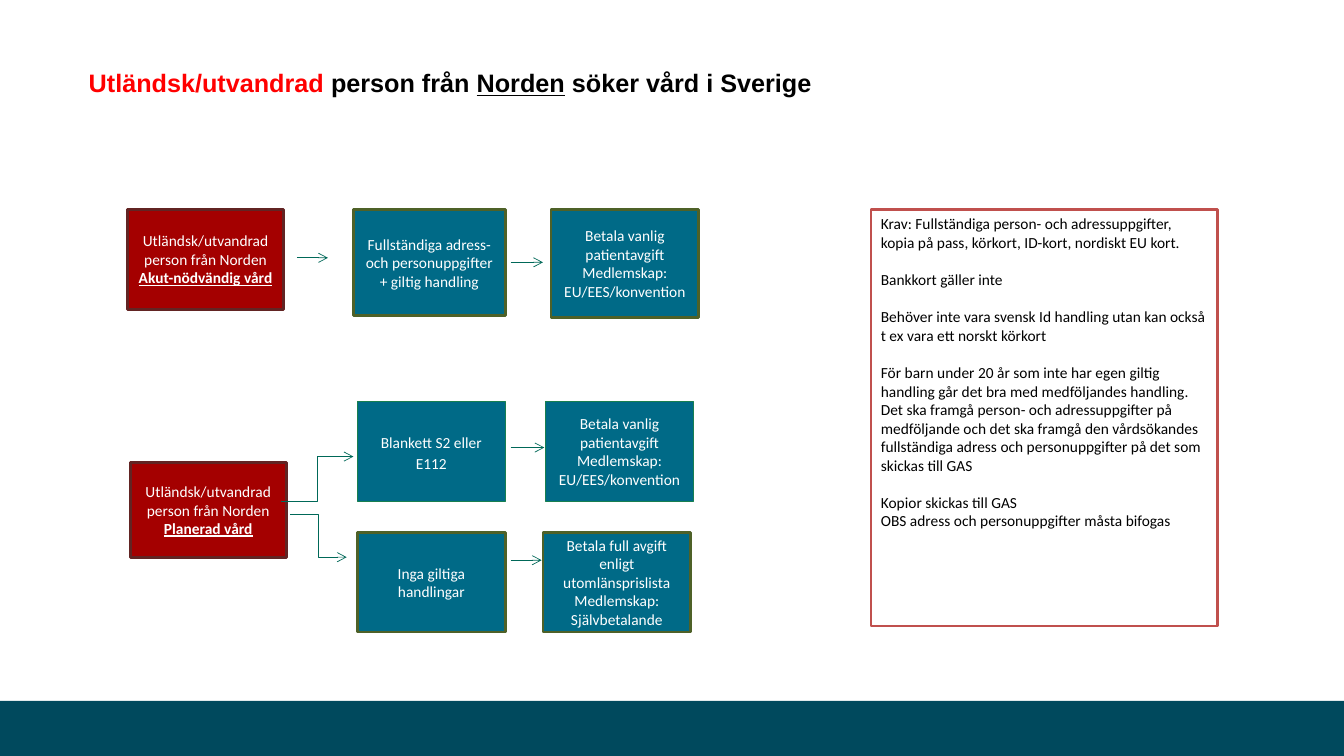
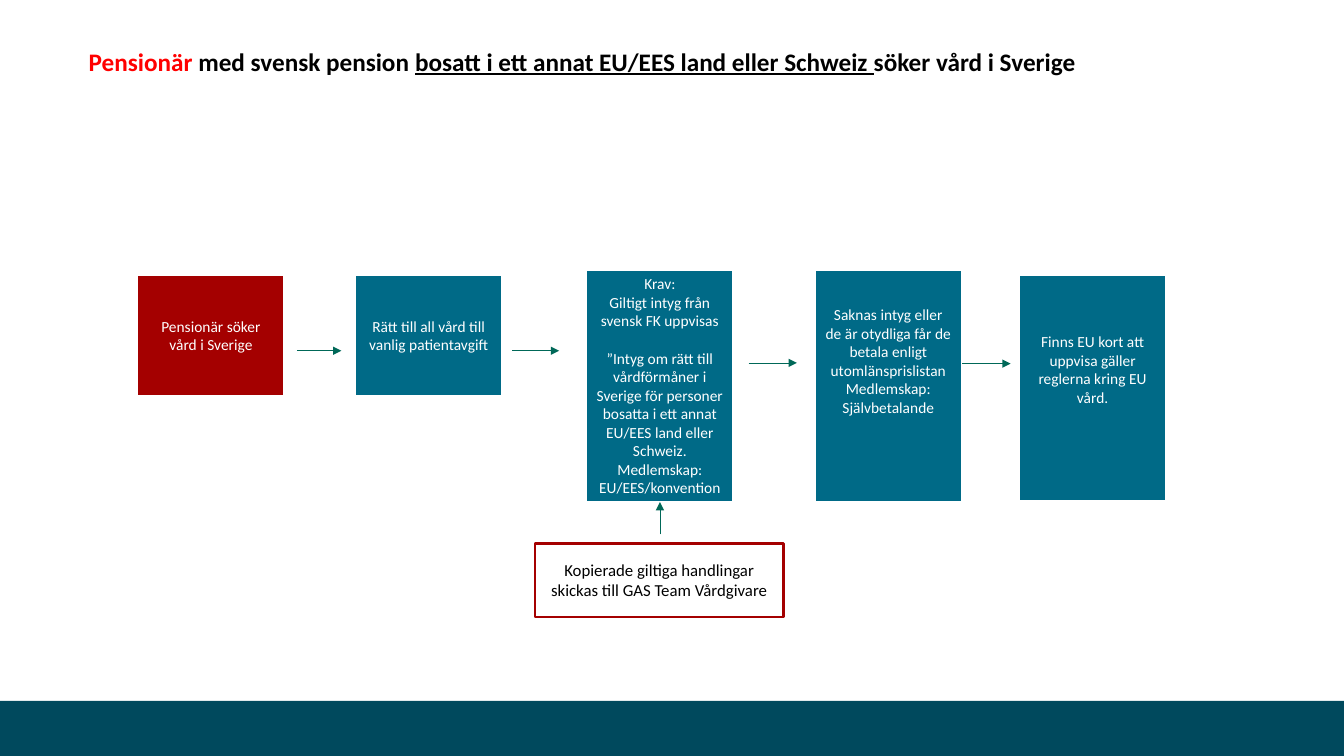
from lxml import etree
from pptx import Presentation
from pptx import util as u
from pptx.dml.color import RGBColor
from pptx.enum import shapes, text
from pptx.oxml import ns

# Shared look
WIDTH, HEIGHT = u.Inches(13.33), u.Inches(7.5)
RED, TEAL, NAVY, GREEN = "A40000", "006A87", "00495D", "006858"
MAROON, OLIVE, LEAF, CORAL = "622423", "4E6128", "187F50", "C0504D"
WHITE, BLACK, TITLE_RED = "FFFFFF", "000000", "FF0000"
BODY_FONT = "Calibri"
BLANK_LINE = 13.4  # points, one line of 11 pt text

# Texts used more than once
PAY_USUAL = "Betala vanlig patientavgift\nMedlemskap: EU/EES/konvention"
PERSON = "Utländsk/utvandrad person från Norden\n"


def color(hex_string):
    return RGBColor.from_string(hex_string)


def across(share):
    """Length as a percentage of the slide's width."""
    return int(WIDTH * share / 100)


def down(share):
    """Length as a percentage of the slide's height."""
    return int(HEIGHT * share / 100)


def place(left, top, width, height):
    return across(left), down(top), across(width), down(height)


def style_font(font, size, hex_string, name=BODY_FONT, bold=False, underline=False):
    font.size = u.Pt(size)
    font.name = name
    font.color.rgb = color(hex_string)
    font.bold = bold
    font.underline = underline


def add_rectangle(slide, area, fill, line=None, line_width=2):
    shape = slide.shapes.add_shape(shapes.MSO_SHAPE.RECTANGLE, *place(*area))
    shape.shadow.inherit = False
    shape.fill.solid()
    shape.fill.fore_color.rgb = color(fill)
    if line:
        shape.line.color.rgb = color(line)
        shape.line.width = u.Pt(line_width)
    else:
        shape.line.fill.background()
    return shape


def add_box(slide, area, content, fill=TEAL, line=WHITE, line_width=2, size=11,
            font_color=WHITE, align=text.PP_ALIGN.CENTER, anchor=text.MSO_ANCHOR.MIDDLE,
            spacing=1.0, gaps=(), stress_last=False, lift=0):
    """Box with text; gaps lists paragraphs after a gap, lift is extra bottom margin in points."""
    shape = add_rectangle(slide, area, fill, line, line_width)
    frame = shape.text_frame
    frame.word_wrap = True
    frame.vertical_anchor = anchor
    frame.margin_bottom += u.Pt(lift)
    frame.text = content
    last = len(frame.paragraphs) - 1
    for index, paragraph in enumerate(frame.paragraphs):
        paragraph.alignment = align
        paragraph.line_spacing = spacing
        if index in gaps:
            paragraph.space_before = u.Pt(BLANK_LINE)
        stressed = stress_last and index == last
        for run in paragraph.runs:
            style_font(run.font, size, font_color, bold=stressed, underline=stressed)


def add_arrow(slide, start, end, head, kind=shapes.MSO_CONNECTOR.STRAIGHT):
    connector = slide.shapes.add_connector(
        kind, across(start[0]), down(start[1]), across(end[0]), down(end[1]))
    connector.line.color.rgb = color(GREEN)
    connector.line.width = u.Pt(0.5)
    properties = connector.element.spPr
    outline = properties.find(ns.qn("a:ln"))
    etree.SubElement(outline, ns.qn("a:tailEnd")).set("type", head)
    etree.SubElement(properties, ns.qn("a:effectLst"))


def add_title(slide, top, height, parts, font_name):
    """Title from (words, colour, underlined) parts."""
    frame = slide.shapes.add_textbox(*place(6.6, top, 86.9, height)).text_frame
    frame.word_wrap = True
    frame.vertical_anchor = text.MSO_ANCHOR.MIDDLE
    frame.margin_left = frame.margin_top = frame.margin_right = frame.margin_bottom = 0
    paragraph = frame.paragraphs[0]
    paragraph.line_spacing = 0.9
    for words, hex_string, underlined in parts:
        run = paragraph.add_run()
        run.text = words
        style_font(run.font, 18, hex_string, font_name, True, underlined)


def add_slide(presentation):
    slide = presentation.slides.add_slide(presentation.slide_layouts[6])
    add_rectangle(slide, (0, 92.7, 100, 7.3), NAVY)
    return slide


def build_nordic_slide(presentation):
    slide = add_slide(presentation)
    add_title(slide, 4.8, 12.8, [
        ("Utländsk/utvandrad ", TITLE_RED, False),
        ("person från ", BLACK, False),
        ("Norden", BLACK, True),
        (" söker vård i Sverige", BLACK, False),
    ], "Arial")

    # Starting points
    for area, care in [((9.5, 27.7, 11.6, 13.2), "Akut-nödvändig vård"),
                       ((9.7, 61.2, 11.6, 12.5), "Planerad vård")]:
        add_box(slide, area, PERSON + care, RED, MAROON, stress_last=True)

    # Steps: acute care, planned care with form, planned care without papers
    top, middle, bottom = 27.7, 53.1, 70.4
    width, height = 11, 13.2
    add_box(slide, (26.3, top, 11.3, 14),
            "Fullständiga adress- och personuppgifter + giltig handling", line=OLIVE)
    add_box(slide, (41, top, width, 14.3), PAY_USUAL, line=OLIVE)
    add_box(slide, (26.6, middle, width, height), "Blankett S2 eller E112",
            line=LEAF, line_width=1, spacing=1.15)
    add_box(slide, (40.6, middle, width, height), PAY_USUAL, line=LEAF, line_width=1)
    add_box(slide, (26.6, bottom, width, height), "Inga giltiga handlingar", line=OLIVE)
    add_box(slide, (40.4, bottom, width, height),
            "Betala full avgift enligt utomlänsprislista\nMedlemskap: Självbetalande",
            line=OLIVE)

    # Arrows
    for left, right, level in [(22.1, 24.4, 34.1), (38, 40.4, 34.7),
                               (38, 40.5, 59.2), (38, 40.3, 74.1)]:
        add_arrow(slide, (left, level), (right, level), "arrow")
    for start, end in [((21.6, 68.1), (25.8, 73.7)), ((20.9, 66.3), (26.3, 60.4))]:
        add_arrow(slide, start, end, "arrow", shapes.MSO_CONNECTOR.ELBOW)

    # Requirements
    requirements = [
        "Krav: Fullständiga person- och adressuppgifter, kopia på pass, körkort, "
        "ID-kort, nordiskt EU kort.",
        "Bankkort gäller inte",
        "Behöver inte vara svensk Id handling utan kan också t ex vara ett norskt körkort",
        "För barn under 20 år som inte har egen giltig handling går det bra med "
        "medföljandes handling. Det ska framgå person- och adressuppgifter på "
        "medföljande och det ska framgå den vårdsökandes fullständiga adress och "
        "personuppgifter på det som skickas till GAS",
        "Kopior skickas till GAS",
        "OBS adress och personuppgifter måsta bifogas",
    ]
    add_box(slide, (64.8, 27.7, 25.8, 55.1), "\n".join(requirements), WHITE, CORAL,
            font_color=BLACK, align=text.PP_ALIGN.LEFT, anchor=text.MSO_ANCHOR.TOP,
            gaps=(1, 2, 3, 4))


def build_pensioner_slide(presentation):
    slide = add_slide(presentation)
    add_title(slide, 2.7, 11.3, [
        ("Pensionär", TITLE_RED, False),
        (" med svensk pension ", BLACK, False),
        ("bosatt i ett annat EU/EES land eller Schweiz ", BLACK, True),
        ("söker vård i Sverige", BLACK, False),
    ], BODY_FONT)

    # Steps from left to right
    width = 11
    add_box(slide, (10.2, 36.3, width, 16.1), "Pensionär söker vård i Sverige", RED)
    add_box(slide, (26.4, 36.3, width, 16.1), "Rätt till all vård till vanlig patientavgift")
    add_box(slide, (43.6, 35.6, width, 30.8),
            "Krav:\nGiltigt intyg från svensk FK uppvisas\n"
            "”Intyg om rätt till vårdförmåner i Sverige för personer bosatta i ett "
            "annat EU/EES land eller Schweiz.\nMedlemskap: EU/EES/konvention", gaps=(2,))
    add_box(slide, (60.6, 35.6, width, 30.8),
            "Saknas intyg eller de är otydliga får de betala enligt utomlänsprislistan\n"
            "Medlemskap:\nSjälvbetalande", lift=35)
    add_box(slide, (75.8, 36.3, width, 30.1),
            "Finns EU kort att uppvisa gäller reglerna kring EU vård.", lift=27)

    # Copies to be sent
    add_box(slide, (39.8, 71.9, 18.5, 9.7),
            "Kopierade giltiga handlingar skickas till GAS Team Vårdgivare",
            WHITE, RED, 1.5, size=12, font_color=BLACK)

    # Arrows
    for left, right, level in [(22.1, 25.4, 46.4), (38.1, 41.6, 46.4),
                               (55.7, 59.3, 48), (71.6, 75.2, 48.1)]:
        add_arrow(slide, (left, level), (right, level), "triangle")
    add_arrow(slide, (49.1, 70.7), (49.1, 66.4), "triangle")


def main():
    presentation = Presentation()
    presentation.slide_width, presentation.slide_height = WIDTH, HEIGHT
    build_nordic_slide(presentation)
    build_pensioner_slide(presentation)
    presentation.save("out.pptx")


if __name__ == "__main__":
    main()
